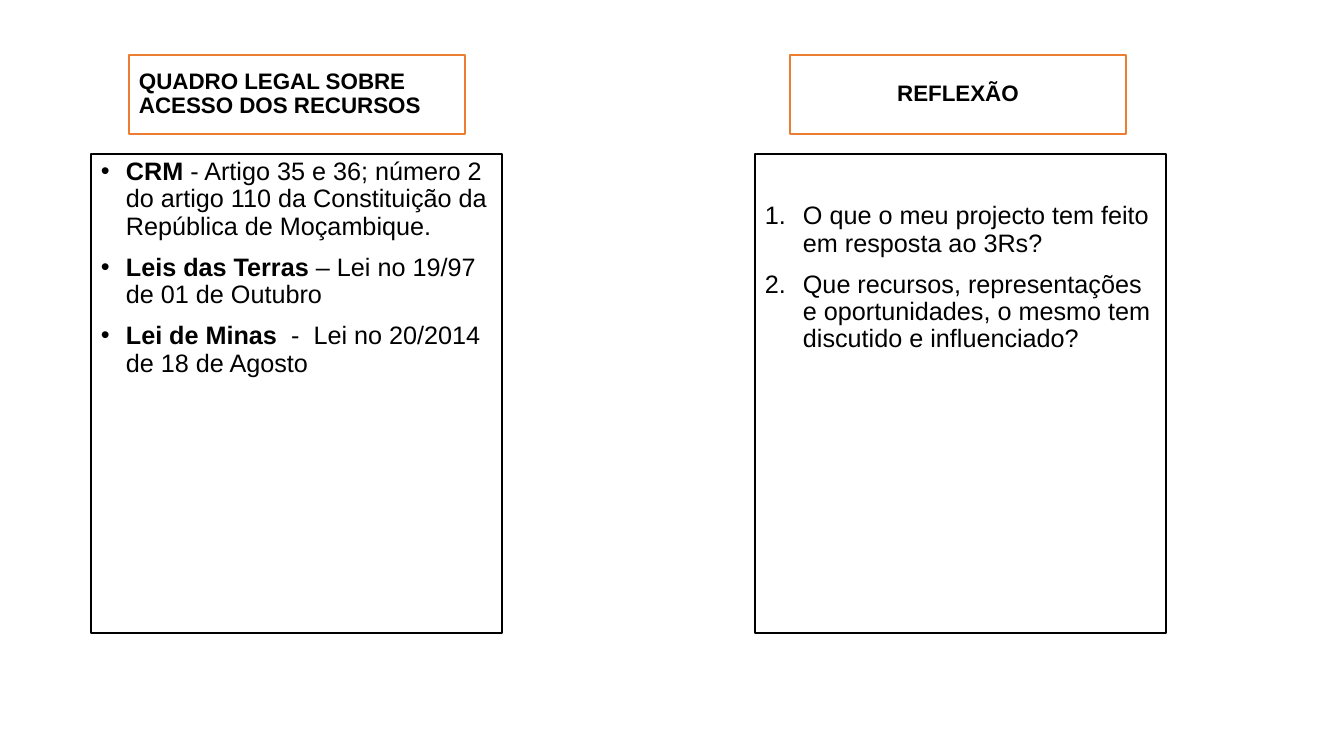
from lxml import etree
from pptx import Presentation
from pptx import util as u
from pptx.dml.color import RGBColor
from pptx.enum import shapes, text
from pptx.oxml import ns

BLACK = RGBColor(0x00, 0x00, 0x00)
WHITE = RGBColor(0xFF, 0xFF, 0xFF)
ORANGE = RGBColor(0xED, 0x7D, 0x31)
FONT = "Arial"

LAWS = [
    [("CRM ", True), ("- Artigo 35 e 36; número 2 do artigo 110 da "
                      "Constituição da República de Moçambique.", False)],
    [("Leis das Terras ", True), ("– Lei no 19/97 de 01 de Outubro", False)],
    [("Lei de Minas  ", True), ("-  Lei no 20/2014 de 18 de Agosto", False)],
]
QUESTIONS = [
    [("O que o meu projecto tem feito em resposta ao 3Rs?", False)],
    [("Que recursos, representações e oportunidades, o mesmo tem discutido "
      "e influenciado?", False)],
]


def px(n):
    """Turn pixels into EMU."""
    return u.Emu(round(n * 914400 / 100.8))


def add_box(s, x, y, w, h, line, anchor):
    """Add an outlined white box and return its text frame."""
    sp = s.shapes.add_shape(shapes.MSO_SHAPE.RECTANGLE, px(x), px(y), px(w), px(h))
    sp.shadow.inherit = False
    sp.fill.solid()
    sp.fill.fore_color.rgb = WHITE
    sp.line.color.rgb = line
    sp.line.width = u.Pt(1)
    tf = sp.text_frame
    tf.word_wrap = True
    tf.vertical_anchor = anchor
    return tf


def add_paragraph(tf, runs, size, align):
    """Write runs into the next free paragraph and return it."""
    p = tf.paragraphs[0] if not tf.paragraphs[0].runs else tf.add_paragraph()
    p.alignment = align
    p.line_spacing = 0.9
    for words, bold in runs:
        r = p.add_run()
        r.text = words
        r.font.name = FONT
        r.font.size = u.Pt(size)
        r.font.bold = bold
        r.font.color.rgb = BLACK
    return p


def set_bullet(p, tag, indent, **attrs):
    """Give a paragraph a hanging bullet or number."""
    pPr = p._p.get_or_add_pPr()
    pPr.set("marL", str(px(indent)))
    pPr.set("indent", str(-px(indent)))
    etree.SubElement(pPr, ns.qn("a:buFont"), typeface=FONT)
    etree.SubElement(pPr, ns.qn("a:" + tag), **attrs)


def add_heading(s, x, y, w, h, words, align):
    """Add a heading box with bold text centred in height."""
    tf = add_box(s, x, y, w, h, ORANGE, text.MSO_ANCHOR.MIDDLE)
    add_paragraph(tf, [(words, True)], 16, align)


def add_list(s, x, y, w, h, items, top, tag, indent, **attrs):
    """Add a framed list whose text starts below the given top inset."""
    tf = add_box(s, x, y, w, h, BLACK, text.MSO_ANCHOR.TOP)
    tf.margin_top = px(top)
    for runs in items:
        p = add_paragraph(tf, runs, 18, text.PP_ALIGN.LEFT)
        p.space_before = u.Pt(10)
        set_bullet(p, tag, indent, **attrs)


def main():
    """Build and save the slide."""
    prs = Presentation()
    prs.slide_width, prs.slide_height = px(1344), px(756)
    s = prs.slides.add_slide(prs.slide_layouts[6])
    add_heading(s, 129, 55, 336, 79, "QUADRO LEGAL SOBRE ACESSO DOS RECURSOS",
                text.PP_ALIGN.LEFT)
    add_list(s, 91, 154, 411, 479, LAWS, 5, "buChar", 25, char="•")
    add_list(s, 755, 154, 411, 479, QUESTIONS, 49, "buAutoNum", 38,
             type="arabicPeriod")
    add_heading(s, 790, 55, 336, 79, "REFLEXÃO", text.PP_ALIGN.CENTER)
    prs.save("out.pptx")


if __name__ == "__main__":
    main()
